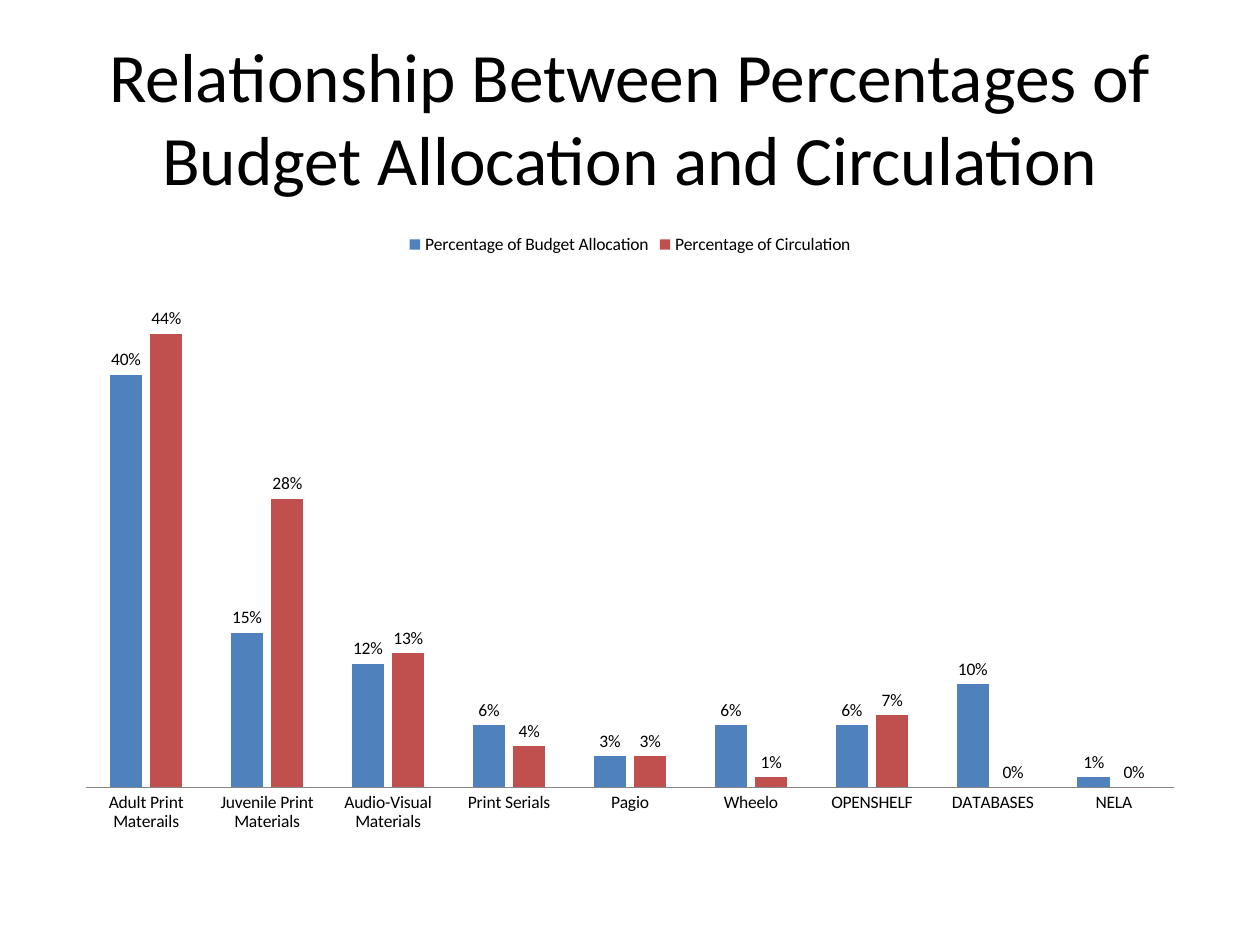
"""Build a slide comparing library budget allocation with circulation."""
from pptx import Presentation
from pptx import util as u
from pptx.chart import data
from pptx.dml import color
from pptx.enum import chart as charts, text

FONT = "Calibri"
COLORS = {"text": "000000", "axis": "868686", "budget": "4F81BD", "circulation": "C0504D"}
TITLE = "Relationship Between Percentages of Budget Allocation and Circulation"
CATEGORIES = [
    "Adult Print Materails", "Juvenile Print Materials", "Audio-Visual Materials",
    "Print Serials", "Pagio", "Wheelo", "OPENSHELF", "DATABASES", "NELA",
]
SERIES = [
    ("Percentage of Budget Allocation", "budget",
     [0.40, 0.15, 0.12, 0.06, 0.03, 0.06, 0.06, 0.10, 0.01]),
    ("Percentage of Circulation", "circulation",
     [0.44, 0.28, 0.13, 0.04, 0.03, 0.01, 0.07, 0, 0]),
]


def rgb(name):
    """Return the named colour."""
    return color.RGBColor.from_string(COLORS[name])


def style_font(font, size):
    """Set the slide's typeface and text colour at a point size."""
    font.name = FONT
    font.size = u.Pt(size)
    font.color.rgb = rgb("text")


def add_title(slide):
    """Add the centred heading."""
    box = slide.shapes.add_textbox(u.Inches(0.5), u.Inches(0.3), u.Inches(9), u.Inches(1.25))
    frame = box.text_frame
    frame.word_wrap = True
    frame.vertical_anchor = text.MSO_ANCHOR.MIDDLE
    para = frame.paragraphs[0]
    para.text = TITLE
    para.alignment = text.PP_ALIGN.CENTER
    style_font(para.font, 39.6)


def style_axes(chart):
    """Show a plain category axis and hide the value axis."""
    category_axis = chart.category_axis
    category_axis.major_tick_mark = charts.XL_TICK_MARK.NONE
    category_axis.format.line.color.rgb = rgb("axis")
    category_axis.format.line.width = u.Pt(0.75)
    value_axis = chart.value_axis
    value_axis.visible = False
    value_axis.has_major_gridlines = False
    value_axis.minimum_scale = 0
    value_axis.maximum_scale = 0.5
    value_axis.tick_labels.number_format = "0%"
    value_axis.tick_labels.number_format_is_linked = False


def style_series(series, color_name):
    """Fill a series and label its columns with percentages."""
    series.format.fill.solid()
    series.format.fill.fore_color.rgb = rgb(color_name)
    labels = series.data_labels
    labels.show_value = True
    labels.number_format = "0%"
    labels.number_format_is_linked = False
    labels.position = charts.XL_LABEL_POSITION.OUTSIDE_END
    style_font(labels.font, 10)


def add_budget_chart(slide):
    """Add the clustered columns of budget and circulation shares."""
    chart_data = data.CategoryChartData(number_format="0%")
    chart_data.categories = CATEGORIES
    for name, _, values in SERIES:
        chart_data.add_series(name, values)
    chart = slide.shapes.add_chart(
        charts.XL_CHART_TYPE.COLUMN_CLUSTERED,
        u.Inches(0.5), u.Inches(1.75), u.Inches(9), u.Inches(4.95), chart_data,
    ).chart
    style_font(chart.font, 10)
    chart.has_title = False
    chart.has_legend = True
    chart.legend.position = charts.XL_LEGEND_POSITION.TOP
    chart.legend.include_in_layout = False
    style_axes(chart)
    plot = chart.plots[0]
    plot.gap_width = 150
    plot.overlap = -25
    plot.vary_by_categories = False
    for series, (_, color_name, _) in zip(plot.series, SERIES):
        style_series(series, color_name)


def main():
    """Create and save the deck."""
    deck = Presentation()
    deck.slide_width, deck.slide_height = u.Inches(10), u.Inches(7.5)
    slide = deck.slides.add_slide(deck.slide_layouts[6])
    add_title(slide)
    add_budget_chart(slide)
    deck.save("out.pptx")


if __name__ == "__main__":
    main()
